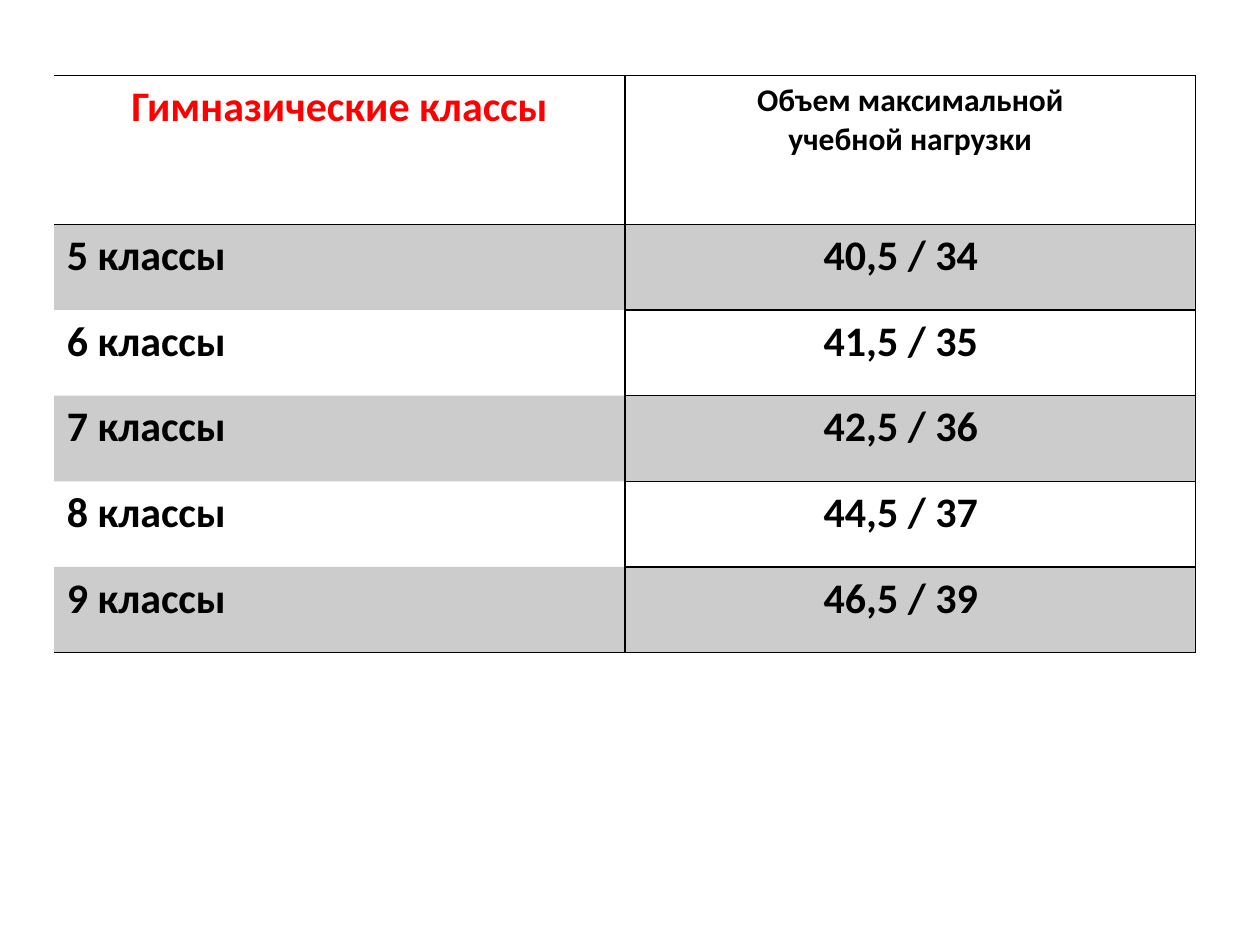
"""Slide with a table of the maximum study load for gymnasium classes."""
from pptx import Presentation
from pptx.dml.color import RGBColor
from pptx.enum.text import PP_ALIGN as Align
from pptx.oxml import parse_xml
from pptx.oxml.ns import nsdecls
from pptx.util import Inches, Pt

COLORS = {"ink": "000000", "accent": "FF0000"}
HEADINGS = ("Гимназические классы", "Объем максимальной\nучебной нагрузки")
LOADS = [
    ("5 классы", "40,5 / 34"),
    ("6 классы", "41,5 / 35"),
    ("7 классы", "42,5 / 36"),
    ("8 классы", "44,5 / 37"),
    ("9 классы", "46,5 / 39"),
]
LEFT, TOP, COLUMN_WIDTH = 0.43, 0.6, 4.53
HEADING_HEIGHT, LOAD_HEIGHT = 1.18, 0.68
BAND_ALPHA = 20000


def set_borders(cell, visible_sides):
    for side in "LRTB":
        if side in visible_sides:
            paint = f'<a:solidFill><a:srgbClr val="{COLORS["ink"]}"/></a:solidFill>'
        else:
            paint = "<a:noFill/>"
        cell._tc.get_or_add_tcPr().append(parse_xml(
            f'<a:ln{side} {nsdecls("a")} w="{Pt(1)}">{paint}</a:ln{side}>'))


def set_band(cell, banded):
    if not banded:
        cell.fill.background()
        return
    cell.fill.solid()
    cell.fill.fore_color.rgb = RGBColor.from_string(COLORS["ink"])
    tint = cell._tc.tcPr.find("{*}solidFill/{*}srgbClr")
    tint.append(parse_xml(f'<a:alpha {nsdecls("a")} val="{BAND_ALPHA}"/>'))


def set_text(cell, text, size, color, align):
    cell.text_frame.text = text
    for paragraph in cell.text_frame.paragraphs:
        paragraph.alignment = align
        for run in paragraph.runs:
            run.font.name = "Calibri"
            run.font.size = Pt(size)
            run.font.bold = True
            run.font.color.rgb = RGBColor.from_string(COLORS[color])


def main():
    prs = Presentation()
    prs.slide_width, prs.slide_height = Inches(10), Inches(7.5)
    slide = prs.slides.add_slide(prs.slide_layouts[6])

    rows = [HEADINGS, *LOADS]
    heights = [HEADING_HEIGHT] + [LOAD_HEIGHT] * len(LOADS)
    table = slide.shapes.add_table(
        len(rows), len(HEADINGS), Inches(LEFT), Inches(TOP),
        Inches(COLUMN_WIDTH * len(HEADINGS)), Inches(sum(heights))).table
    table.first_row = table.horz_banding = False
    for column in table.columns:
        column.width = Inches(COLUMN_WIDTH)

    for r, (texts, height) in enumerate(zip(rows, heights)):
        table.rows[r].height = Inches(height)
        class_sides = {0: "RTB", 1: "RT", len(LOADS): "RB"}.get(r, "R")
        for c, text in enumerate(texts):
            cell = table.cell(r, c)
            is_heading, is_load = r == 0, c == 1
            set_borders(cell, "LRTB" if is_load else class_sides)
            set_band(cell, r % 2 == 1)
            set_text(cell, text,
                     size=18 if is_heading and is_load else 24,
                     color="accent" if is_heading and not is_load else "ink",
                     align=Align.CENTER if is_heading or is_load else Align.LEFT)
            if is_load and not is_heading:
                cell.margin_right = Inches(0.25)

    prs.save("out.pptx")


if __name__ == "__main__":
    main()
